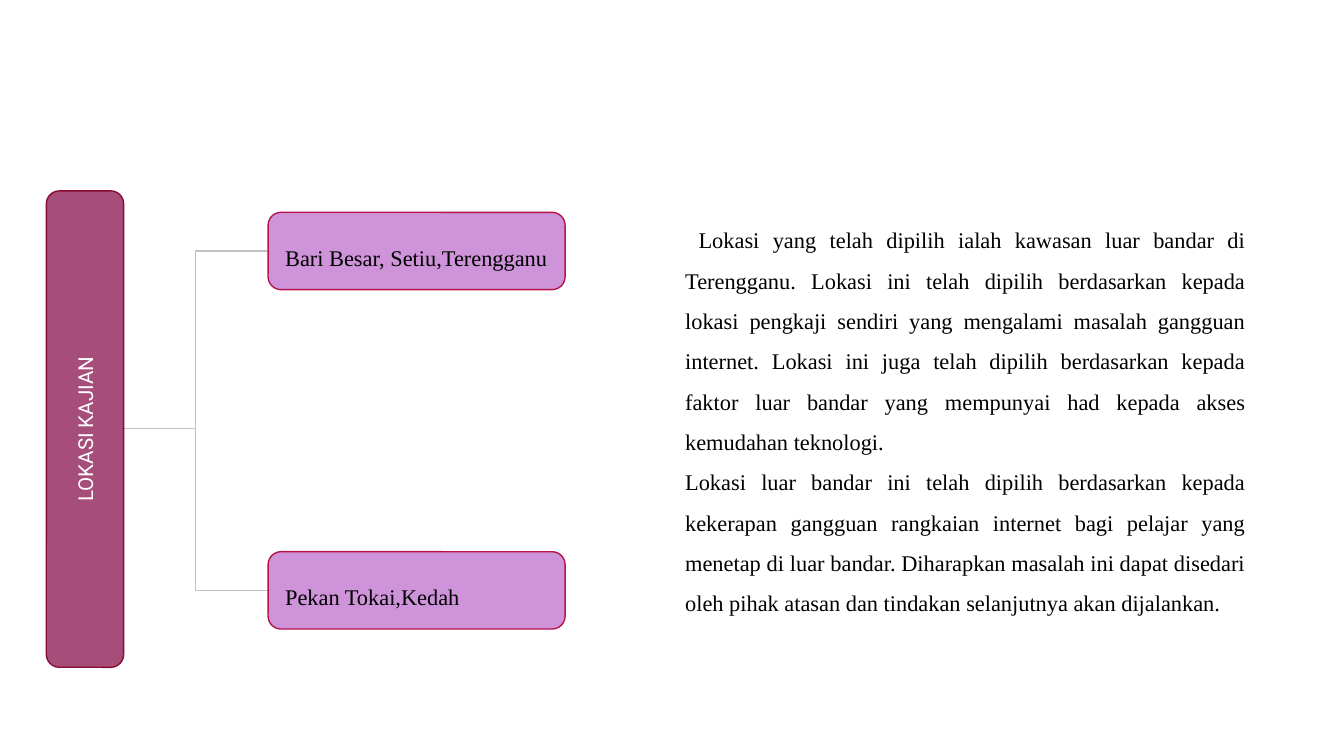
import pptx
import pptx.util
import pptx.dml.color
import pptx.enum.shapes
import pptx.enum.text
import lxml.etree
import pptx.oxml.ns

Pt = pptx.util.Pt
Kind = pptx.enum.shapes.MSO_SHAPE
Align = pptx.enum.text.PP_ALIGN
Middle = pptx.enum.text.MSO_ANCHOR.MIDDLE
HUES = {"bar": "A64D79", "rim": "840D35", "card": "CE93D8", "edge": "B61249",
        "wire": "C2C2C2", "ink": "000000", "pale": "FFFFFF"}
SERIF = "Times New Roman"

deck = pptx.Presentation()
deck.slide_width = pptx.util.Inches(10)
deck.slide_height = deck.slide_width * 9 // 16
slide = deck.slides.add_slide(deck.slide_layouts[6])
cell = deck.slide_width // 100


def hue(name):
    return pptx.dml.color.RGBColor.from_string(HUES[name])


def write(shape, lines, size, face, tint, align, space):
    frame = shape.text_frame
    frame.word_wrap = True
    frame.vertical_anchor = Middle
    frame.margin_left = frame.margin_right = cell
    frame.margin_top = frame.margin_bottom = cell
    frame.text = "\n".join(lines)
    for para in frame.paragraphs:
        para.alignment = align
        para.line_spacing = space
        para.font.size = Pt(size)
        para.font.name = face
        para.font.color.rgb = hue(tint)


left, high = 19.95, 5.75
mid = 31.9
cards = [(15.8, "Bari Besar, Setiu,Terengganu"), (41.05, "Pekan Tokai,Kedah")]

body = slide.shapes.add_textbox(*(round(n * cell) for n in (50, 12.8, 43.7, 36.1)))
write(body, [
    "Lokasi yang telah dipilih ialah kawasan luar bandar di Terengganu. "
    "Lokasi ini telah dipilih berdasarkan kepada lokasi pengkaji sendiri yang "
    "mengalami masalah gangguan internet. Lokasi ini juga telah dipilih "
    "berdasarkan kepada faktor luar bandar yang mempunyai had kepada akses "
    "kemudahan teknologi.",
    "Lokasi luar bandar ini telah dipilih berdasarkan kepada kekerapan "
    "gangguan rangkaian internet bagi pelajar yang menetap di luar bandar. "
    "Diharapkan masalah ini dapat disedari oleh pihak atasan dan tindakan "
    "selanjutnya akan dijalankan.",
], 12, SERIF, "ink", Align.JUSTIFY, 1.5)
body.text_frame.paragraphs[0]._p.get_or_add_pPr().set("indent", str(cell))

for top, label in reversed(cards):
    ends = (9.15, mid, left, top + high / 2)
    wire = slide.shapes.add_connector(
        pptx.enum.shapes.MSO_CONNECTOR.ELBOW, *(round(n * cell) for n in ends))
    wire.line.color.rgb = hue("wire")
    wire.line.width = Pt(0.75)
    lxml.etree.SubElement(wire._element.spPr, pptx.oxml.ns.qn("a:effectLst"))

boxes = [((-11.4, 29.05, 35.45, high), 270, "bar", "rim",
          ("LOKASI KAJIAN", 11, "Roboto", "pale", Align.CENTER, 1))]
for top, label in cards:
    boxes.append(((left, top, 22.1, high), 0, "card", "edge",
                  (label, 12, SERIF, "ink", Align.LEFT, 1.5)))

for place, turn, fill, line, (label, *style) in boxes:
    box = slide.shapes.add_shape(
        Kind.ROUNDED_RECTANGLE, *(round(n * cell) for n in place))
    box.rotation = turn
    box.shadow.inherit = False
    box.fill.solid()
    box.fill.fore_color.rgb = hue(fill)
    box.line.color.rgb = hue(line)
    box.line.width = Pt(0.75)
    write(box, [label], *style)

deck.save("out.pptx")
